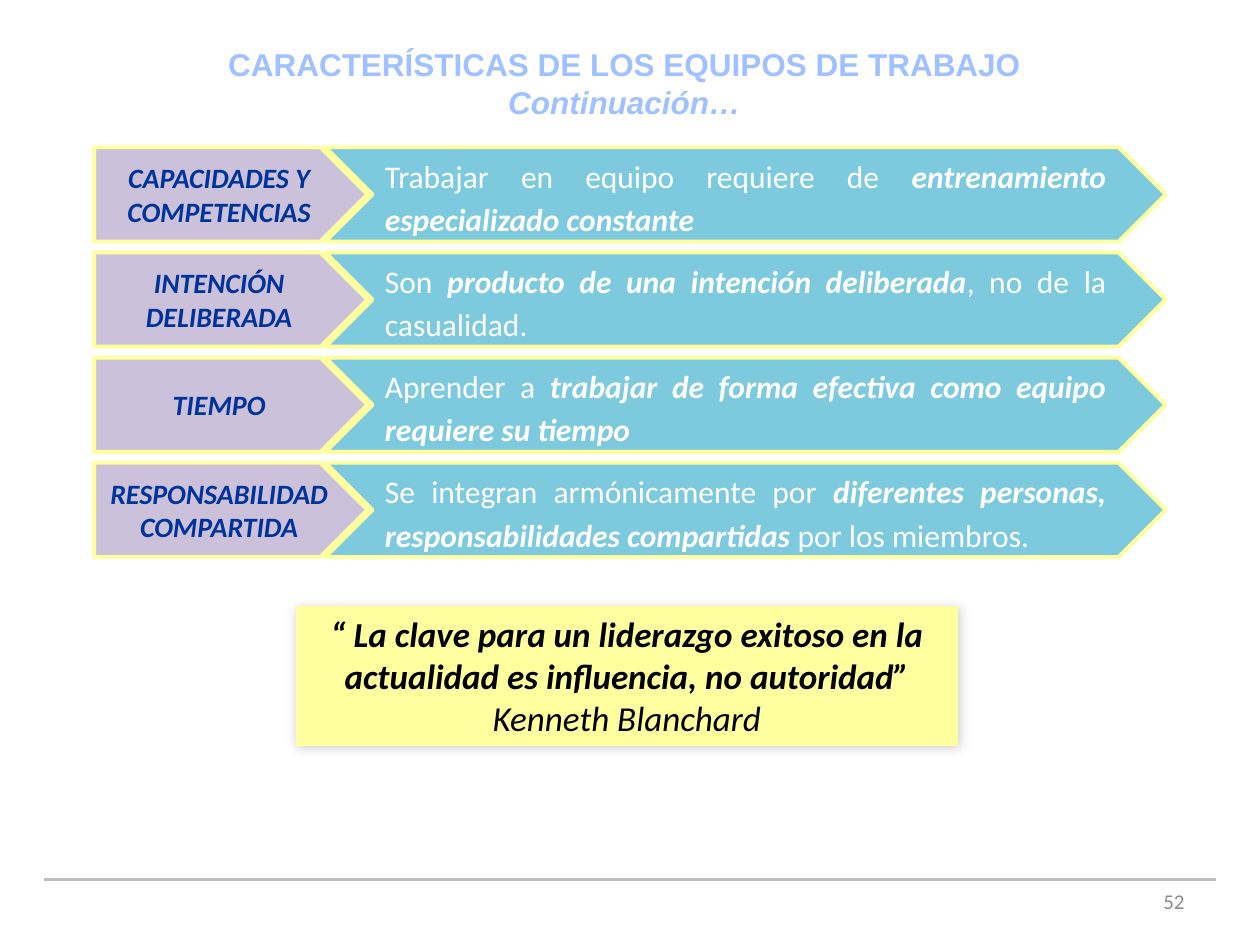
from dataclasses import dataclass

from lxml import etree
from pptx import Presentation
from pptx.dml.color import RGBColor
from pptx.enum import shapes, text
from pptx.oxml.ns import qn
from pptx.util import Cm, Pt


@dataclass(frozen=True)
class Theme:
    heading_font: str = "Arial"
    body_font: str = "Calibri"
    heading: str = "A0C1FF"
    label: str = "00339A"
    label_fill: str = "CCC1DA"
    detail: str = "FFFFFF"
    detail_fill: str = "7DCADF"
    accent: str = "FFFF9F"
    quote: str = "000000"
    rule: str = "BFBFBF"
    number: str = "8C8C8C"
    heading_size: float = 18
    label_size: float = 16
    detail_size: float = 18
    quote_size: float = 20
    number_size: float = 12
    border: float = 2.25
    rule_width: float = 2


ROWS = [
    ("CAPACIDADES Y COMPETENCIAS",
     [("Trabajar en equipo requiere de ", False),
      ("entrenamiento especializado constante", True)]),
    ("INTENCIÓN DELIBERADA",
     [("Son ", False),
      ("producto de una intención deliberada", True),
      (", no de la casualidad.", False)]),
    ("TIEMPO",
     [("Aprender a ", False),
      ("trabajar de forma efectiva como equipo requiere su tiempo", True)]),
    ("RESPONSABILIDAD COMPARTIDA",
     [("Se integran armónicamente por ", False),
      ("diferentes personas, responsabilidades compartidas ", True),
      ("por los miembros.", False)]),
]
ROW_TOP, ROW_PITCH, ROW_HEIGHT = 2.97, 2.12, 1.9


class SlideBuilder:
    def __init__(self, page, theme):
        self.page = page
        self.theme = theme

    def style(self, span, font, size, color, bold=False, italic=False):
        span.font.name = font
        span.font.size = Pt(size)
        span.font.color.rgb = RGBColor.from_string(color)
        span.font.bold = bold
        span.font.italic = italic

    def fill_text(self, box, spans, size, color, align, anchor, spacing=None):
        frame = box.text_frame
        frame.word_wrap = True
        frame.vertical_anchor = anchor
        para = frame.paragraphs[0]
        para.alignment = align
        if spacing:
            para.line_spacing = spacing
        for content, bold, italic in spans:
            span = para.add_run()
            span.text = content
            self.style(span, self.theme.body_font, size, color, bold, italic)

    def title(self, lines, left, top, width, height):
        box = self.page.shapes.title
        box.left, box.top, box.width, box.height = map(Cm, (left, top, width, height))
        frame = box.text_frame
        frame.text = "\n".join(lines)
        frame.word_wrap = True
        frame.auto_size = text.MSO_AUTO_SIZE.NONE
        frame.vertical_anchor = text.MSO_ANCHOR.TOP
        for index, para in enumerate(frame.paragraphs):
            para.alignment = text.PP_ALIGN.CENTER
            self.style(para.runs[0], self.theme.heading_font, self.theme.heading_size,
                       self.theme.heading, bold=True, italic=index > 0)

    def panel(self, kind, left, top, width, height, fill, border=None):
        box = self.page.shapes.add_shape(kind, Cm(left), Cm(top), Cm(width), Cm(height))
        box.shadow.inherit = False
        box.fill.solid()
        box.fill.fore_color.rgb = RGBColor.from_string(fill)
        if border:
            box.line.color.rgb = RGBColor.from_string(border)
            box.line.width = Pt(self.theme.border)
        else:
            box.line.fill.background()
        return box

    def row(self, top, label, details):
        theme = self.theme
        plate = self.panel(shapes.MSO_SHAPE.PENTAGON, 1.9, top, 5.51, ROW_HEIGHT,
                           theme.label_fill, theme.accent)
        self.fill_text(plate, [(label, True, True)], theme.label_size, theme.label,
                       text.PP_ALIGN.CENTER, text.MSO_ANCHOR.MIDDLE)
        arrow = self.panel(shapes.MSO_SHAPE.CHEVRON, 6.56, top, 16.94, ROW_HEIGHT,
                           theme.detail_fill, theme.accent)
        self.fill_text(arrow, [(content, strong, strong) for content, strong in details],
                       theme.detail_size, theme.detail, text.PP_ALIGN.JUSTIFY,
                       text.MSO_ANCHOR.MIDDLE, 1.15)

    def quote(self, words, author, left, top, width, height):
        box = self.panel(shapes.MSO_SHAPE.RECTANGLE, left, top, width, height,
                         self.theme.accent)
        effects = box._element.spPr.find(qn("a:effectLst"))
        shadow = etree.SubElement(effects, qn("a:outerShdw"), blurRad=str(Pt(6)),
                                  dist=str(Pt(1)), dir="2700000", rotWithShape="0")
        color = etree.SubElement(shadow, qn("a:srgbClr"), val="000000")
        etree.SubElement(color, qn("a:alpha"), val="20000")
        self.fill_text(box, [(words, True, True), (author, False, True)],
                       self.theme.quote_size, self.theme.quote,
                       text.PP_ALIGN.CENTER, text.MSO_ANCHOR.TOP)

    def rule(self, left, right, height):
        line = self.page.shapes.add_connector(
            shapes.MSO_CONNECTOR.STRAIGHT, Cm(left), Cm(height), Cm(right), Cm(height))
        line.line.color.rgb = RGBColor.from_string(self.theme.rule)
        line.line.width = Pt(self.theme.rule_width)
        etree.SubElement(line._element.spPr, qn("a:effectLst"))

    def number(self, value, left, top, width, height):
        box = self.page.shapes.add_textbox(Cm(left), Cm(top), Cm(width), Cm(height))
        self.fill_text(box, [(value, False, False)], self.theme.number_size,
                       self.theme.number, text.PP_ALIGN.RIGHT, text.MSO_ANCHOR.MIDDLE)


def main():
    deck = Presentation()
    deck.slide_width, deck.slide_height = Cm(25.4), Cm(19.05)
    page = deck.slides.add_slide(deck.slide_layouts.get_by_name("Title Only"))
    builder = SlideBuilder(page, Theme())
    builder.rule(0.89, 24.51, 17.73)
    builder.number("52", 18.21, 17.65, 5.92, 1.02)
    builder.title(["CARACTERÍSTICAS DE LOS EQUIPOS DE TRABAJO", "Continuación…"],
                  0.69, 0.79, 23.8, 1.8)
    for index, (label, details) in enumerate(ROWS):
        builder.row(ROW_TOP + index * ROW_PITCH, label, details)
    builder.quote("“ La clave para un liderazgo exitoso en la actualidad es influencia, "
                  "no autoridad” ", "Kenneth Blanchard", 5.97, 12.22, 13.34, 2.82)
    deck.save("out.pptx")


if __name__ == "__main__":
    main()
